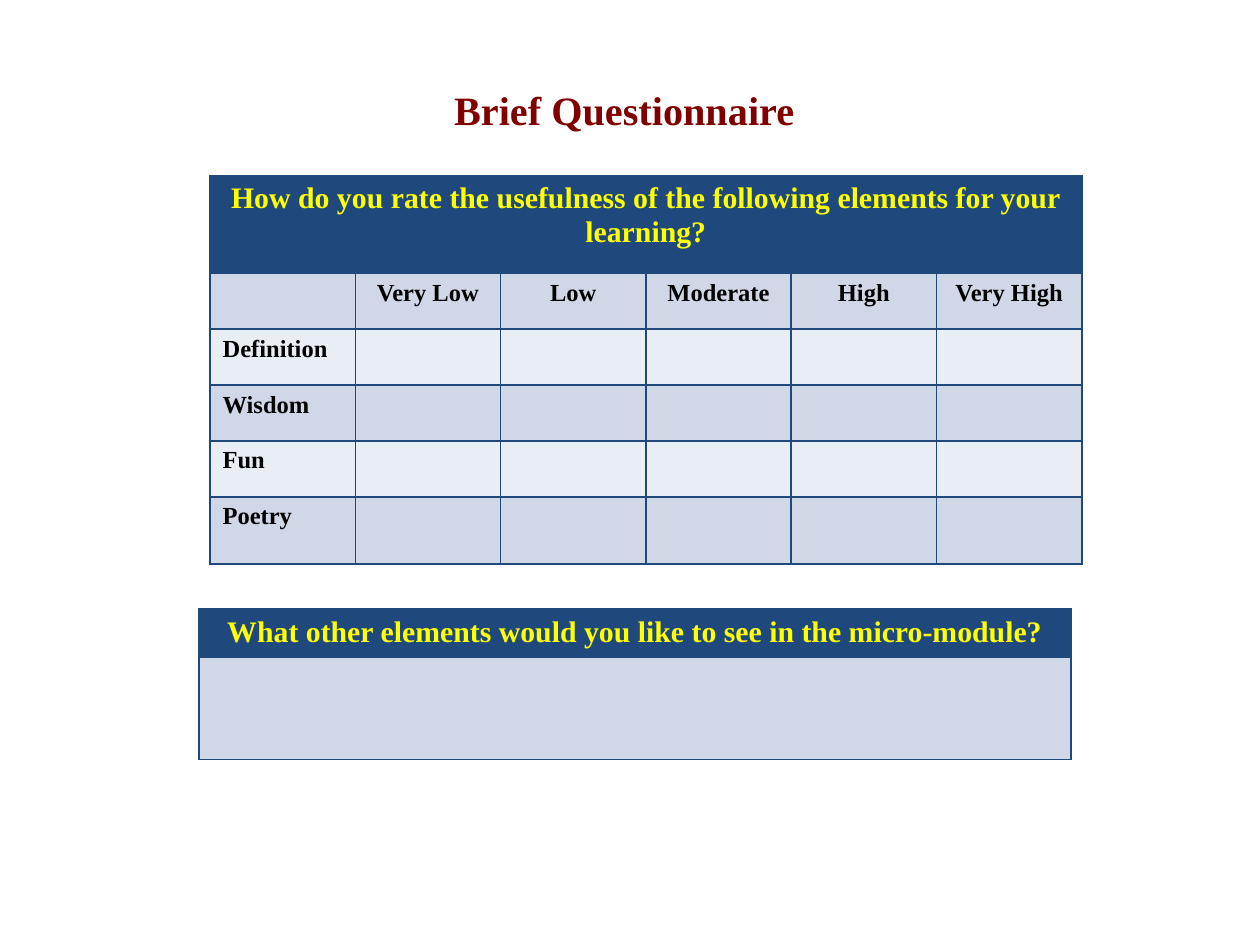
from dataclasses import dataclass

from lxml import etree
from pptx import Presentation
from pptx.dml.color import RGBColor
from pptx.enum.text import PP_ALIGN
from pptx.oxml.ns import qn
from pptx.util import Emu, Pt

CENTER, LEFT = PP_ALIGN.CENTER, PP_ALIGN.LEFT
BLANK_LAYOUT = 6


@dataclass(frozen=True)
class Theme:
    font: str = "Times New Roman"
    title: str = "800000"
    navy: str = "1F497D"
    yellow: str = "FFFF00"
    black: str = "000000"
    bands: tuple = ("D0D8E8", "E9EDF4")
    title_size: int = 23
    question_size: int = 17
    label_size: int = 14
    border_width: int = 1


THEME = Theme()

# Content
TITLE = "Brief Questionnaire"
RATING_QUESTION = "How do you rate the usefulness of the following elements for your learning?"
RATINGS = ["Very Low", "Low", "Moderate", "High", "Very High"]
ELEMENTS = ["Definition", "Wisdom", "Fun", "Poetry"]
OPEN_QUESTION = "What other elements would you like to see in the micro-module?"

# Layout in px
PAGE = (1260, 945)
TITLE_BOX = (294, 79, 661, 79)
TABLE_WIDTH = 872
RATING_AT, RATING_ROWS = (210, 176), [97, 56, 56, 56, 56, 67]
OPEN_AT, OPEN_ROWS = (199, 609), [47, 102]


def px(length):
    return Emu(round(length * 914400 / 126))


def write(frame, text, size, color, align):
    frame.text = text
    paragraph = frame.paragraphs[0]
    paragraph.alignment = align
    for font in [paragraph.font] + [span.font for span in paragraph.runs]:
        font.name, font.size, font.bold = THEME.font, Pt(size), True
        font.color.rgb = RGBColor.from_string(color)


def style_cell(cell, fill):
    properties = cell._tc.get_or_add_tcPr()
    for side in ("a:lnL", "a:lnR", "a:lnT", "a:lnB"):
        line = etree.SubElement(properties, qn(side), w=str(Pt(THEME.border_width)))
        solid = etree.SubElement(line, qn("a:solidFill"))
        etree.SubElement(solid, qn("a:srgbClr"), val=THEME.navy)
    cell.fill.solid()
    cell.fill.fore_color.rgb = RGBColor.from_string(fill)


def add_question_table(page, at, heights, question, body):
    """Place a table with a full-width question above banded body rows."""
    columns = len(body[0])
    table = page.shapes.add_table(
        len(heights), columns, px(at[0]), px(at[1]), px(TABLE_WIDTH), px(sum(heights))
    ).table
    for column in table.columns:
        column.width = px(TABLE_WIDTH / columns)
    for row, height in zip(table.rows, heights):
        row.height = px(height)

    # Question row
    for cell in table.rows[0].cells:
        style_cell(cell, THEME.navy)
    heading = table.cell(0, 0)
    if columns > 1:
        heading.merge(table.cell(0, columns - 1))
    write(heading.text_frame, question, THEME.question_size, THEME.yellow, CENTER)

    # Answer rows
    for r, texts in enumerate(body):
        for c, text in enumerate(texts):
            cell = table.cell(r + 1, c)
            style_cell(cell, THEME.bands[r % 2])
            align = LEFT if c == 0 else CENTER
            write(cell.text_frame, text, THEME.label_size, THEME.black, align)


def main():
    deck = Presentation()
    deck.slide_width, deck.slide_height = map(px, PAGE)
    page = deck.slides.add_slide(deck.slide_layouts[BLANK_LAYOUT])

    # Title
    box = page.shapes.add_textbox(*map(px, TITLE_BOX))
    box.text_frame.word_wrap = True
    write(box.text_frame, TITLE, THEME.title_size, THEME.title, CENTER)

    # Rating grid and open question
    grid = [[""] + RATINGS] + [[name] + [""] * len(RATINGS) for name in ELEMENTS]
    add_question_table(page, RATING_AT, RATING_ROWS, RATING_QUESTION, grid)
    add_question_table(page, OPEN_AT, OPEN_ROWS, OPEN_QUESTION, [[""]])

    deck.save("out.pptx")


if __name__ == "__main__":
    main()
